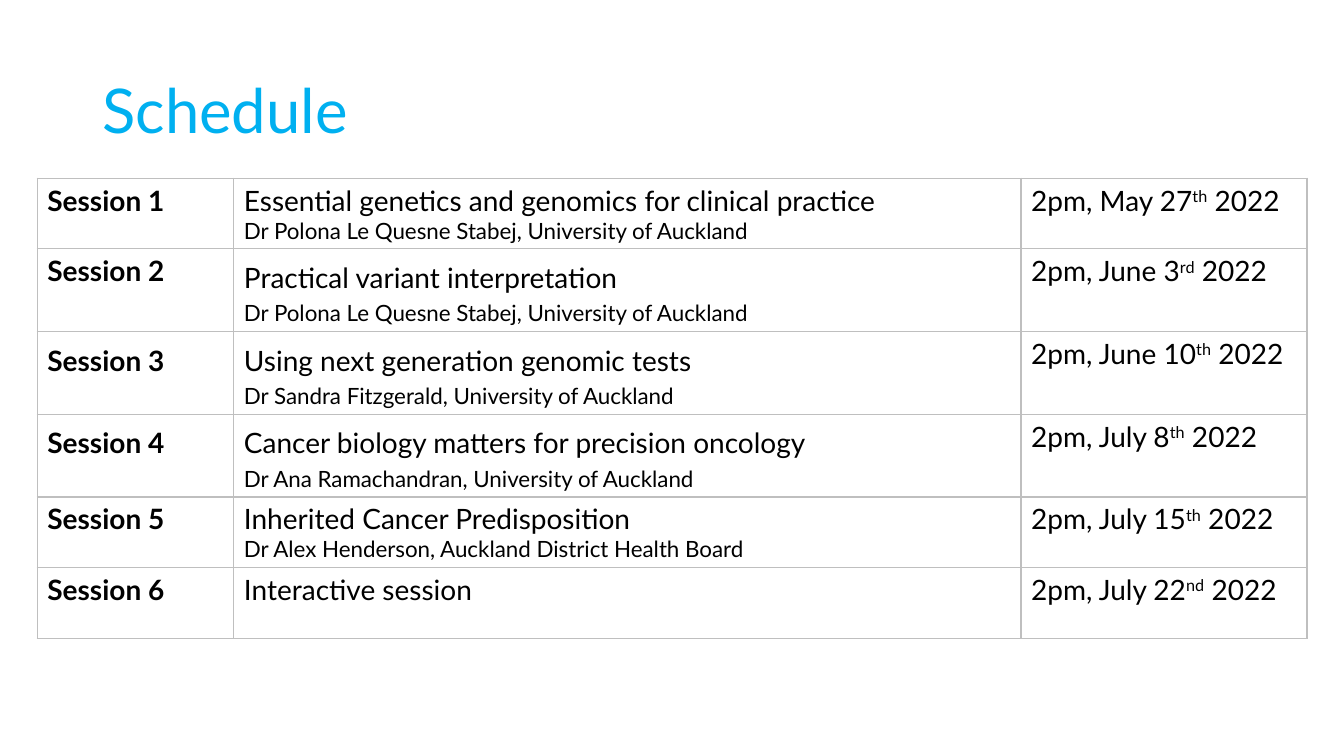
import pptx
import pptx.util
import pptx.dml.color
import pptx.enum.text
import pptx.oxml
import pptx.oxml.ns

Pt = pptx.util.Pt
ALIGN = pptx.enum.text.PP_ALIGN

TITLE = "Schedule"
AUCKLAND = "University of Auckland"
SESSIONS = [
    ("Essential genetics and genomics for clinical practice",
     f"Dr Polona Le Quesne Stabej, {AUCKLAND}", ("2pm, May 27", "th", " 2022")),
    ("Practical variant interpretation",
     f"Dr Polona Le Quesne Stabej, {AUCKLAND}", ("2pm, June 3", "rd", " 2022")),
    ("Using next generation genomic tests",
     f"Dr Sandra Fitzgerald, {AUCKLAND}", ("2pm, June 10", "th", " 2022")),
    ("Cancer biology matters for precision oncology",
     f"Dr Ana Ramachandran, {AUCKLAND}", ("2pm, July 8", "th", " 2022")),
    ("Inherited Cancer Predisposition",
     "Dr Alex Henderson, Auckland District Health Board", ("2pm, July 15", "th", " 2022")),
    ("Interactive session", None, ("2pm, July 22", "nd", " 2022")),
]
LOOSE_TOPICS = {2, 3, 4}
LOOSE_LABELS = {3, 4}
JUSTIFIED_LABELS = {1, 2, 3, 4}
JUSTIFIED_TOPICS = {3, 4}
COLUMN_WIDTHS = [140.4, 562.3, 204.3]
ROW_HEIGHT, LOOSE_ROW_HEIGHT = 50.4, 59.04
TABLE_LEFT, TABLE_TOP = 26.64, 127.3
FONT = "Lato"
BLACK, BLUE, GREY, WHITE = "000000", "00B0F0", "BFBFBF", "FFFFFF"


def color(value):
    return pptx.dml.color.RGBColor.from_string(value)


def style(span, size, tint=BLACK, bold=False):
    span.font.name = FONT
    span.font.size = Pt(size)
    span.font.bold = bold
    span.font.color.rgb = color(tint)


def fill_cell(cell, lines, bold=False, loose=False, justified=False):
    cell.text_frame.text = "\n".join(text for text, size in lines)
    for para, (text, size) in zip(cell.text_frame.paragraphs, lines):
        para.alignment = ALIGN.JUSTIFY if justified else ALIGN.LEFT
        para.line_spacing = 1.2 if loose else 1.0
        style(para.runs[0], size, bold=bold)


def fill_date(cell, parts):
    para = cell.text_frame.paragraphs[0]
    for index, text in enumerate(parts):
        span = para.add_run()
        span.text = text
        style(span, 20)
        if index == 1:
            span.font._element.set("baseline", "30000")


def frame_cell(cell):
    cell.fill.solid()
    cell.fill.fore_color.rgb = color(WHITE)
    properties = cell._tc.get_or_add_tcPr()
    for index, side in enumerate("LRTB"):
        properties.insert(index, pptx.oxml.parse_xml(
            f'<a:ln{side} {pptx.oxml.ns.nsdecls("a")} w="{Pt(1)}"><a:solidFill>'
            f'<a:srgbClr val="{GREY}"/></a:solidFill></a:ln{side}>'))


def add_title(page):
    title = page.shapes.title
    title.left, title.top, title.width, title.height = Pt(66), Pt(28.8), Pt(828), Pt(104.4)
    title.text_frame.text = TITLE
    title.text_frame.vertical_anchor = pptx.enum.text.MSO_ANCHOR.MIDDLE
    para = title.text_frame.paragraphs[0]
    para.alignment = ALIGN.LEFT
    para.line_spacing = 0.9
    style(para.runs[0], 44, BLUE)


def add_schedule(page):
    heights = [LOOSE_ROW_HEIGHT if number in LOOSE_TOPICS else ROW_HEIGHT
               for number in range(1, len(SESSIONS) + 1)]
    table = page.shapes.add_table(
        len(SESSIONS), len(COLUMN_WIDTHS), Pt(TABLE_LEFT), Pt(TABLE_TOP),
        Pt(sum(COLUMN_WIDTHS)), Pt(sum(heights))).table
    table.first_row = table.horz_banding = False
    for column, width in zip(table.columns, COLUMN_WIDTHS):
        column.width = Pt(width)
    for number, (topic, speaker, date) in enumerate(SESSIONS, 1):
        row = table.rows[number - 1]
        row.height = Pt(heights[number - 1])
        label_cell, topic_cell, date_cell = row.cells
        fill_cell(label_cell, [(f"Session {number}", 20)], True,
                  number in LOOSE_LABELS, number in JUSTIFIED_LABELS)
        lines = [(topic, 20)] + ([(speaker, 16)] if speaker else [])
        fill_cell(topic_cell, lines, False,
                  number in LOOSE_TOPICS, number in JUSTIFIED_TOPICS)
        fill_date(date_cell, date)
        for cell in row.cells:
            frame_cell(cell)


def main():
    deck = pptx.Presentation()
    deck.slide_width, deck.slide_height = Pt(960), Pt(540)
    page = deck.slides.add_slide(deck.slide_layouts[5])
    add_title(page)
    add_schedule(page)
    deck.save("out.pptx")


if __name__ == "__main__":
    main()
